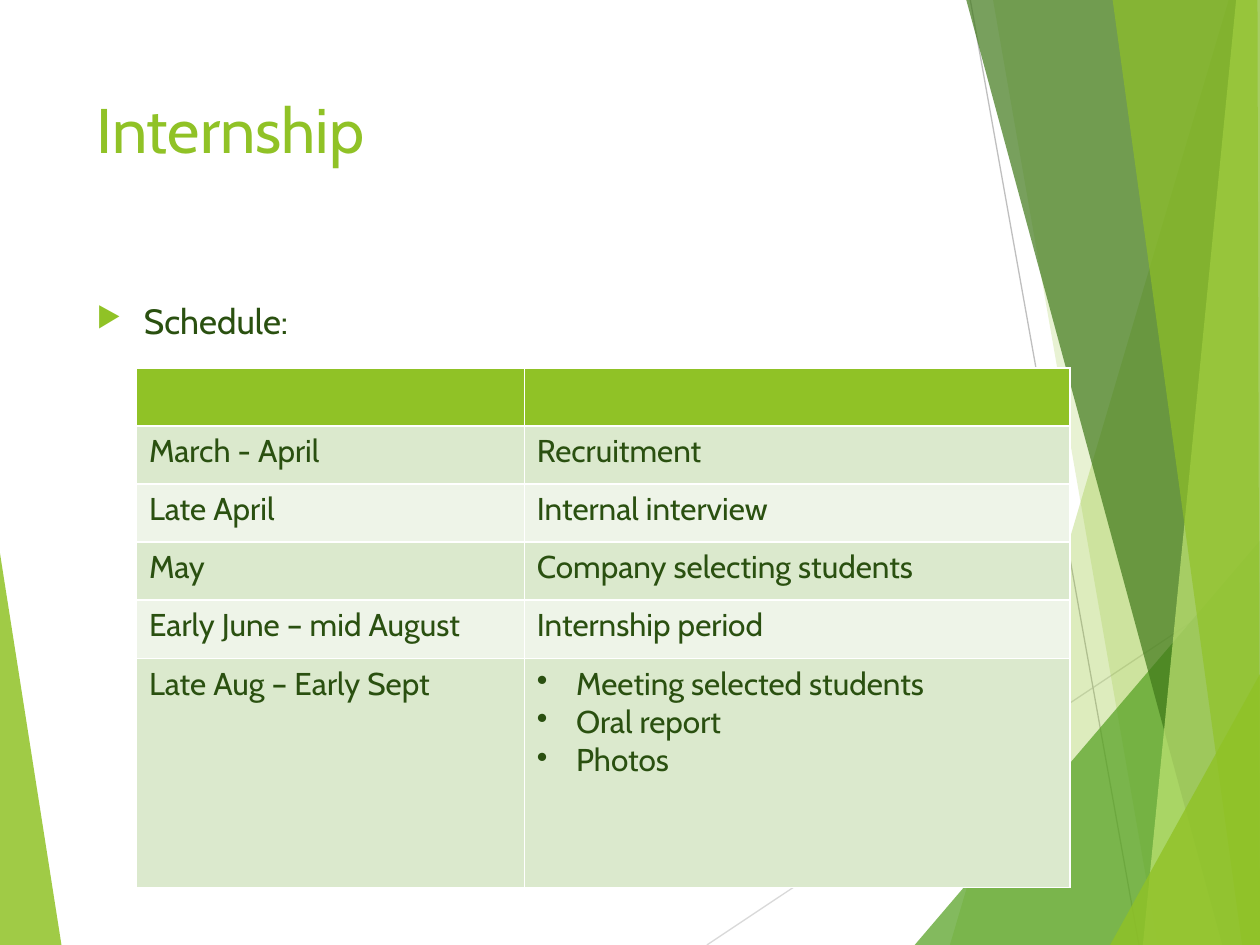
from lxml.etree import SubElement
from pptx import Presentation
from pptx.dml.color import RGBColor
from pptx.enum.shapes import MSO_CONNECTOR
from pptx.oxml.ns import qn
from pptx.util import Cm, Pt

THEME = {
    "font": "Cabin", "title_size": 36, "body_size": 20, "table_size": 18,
    "accent": "90C226", "text": "2A5010", "border": "FFFFFF",
    "bands": ("DBE9CD", "EEF4E8"),
    "leaf": "54A021", "forest": "3F7819", "lime": "C0E474",
    "light_line": "D9D9D9", "dark_line": "BFBFBF",
}
WIDTH, HEIGHT = 25.4, 19.05

TITLE = "Internship"
HEADING = "Schedule:"
SCHEDULE = [
    ("March - April", ["Recruitment"]),
    ("Late April", ["Internal interview"]),
    ("May", ["Company selecting students"]),
    ("Early June – mid August", ["Internship period"]),
    ("Late Aug – Early Sept", ["Meeting selected students", "Oral report", "Photos"]),
]
TABLE_LEFT, TABLE_TOP = 2.75, 7.42
COLUMN_WIDTHS = (7.82, 11)
ROW_HEIGHT, LAST_ROW_HEIGHT = 1.17, 4.62

TOP_RIGHT, BOTTOM_RIGHT = (WIDTH, 0), (WIDTH, HEIGHT)
LEFT_FACET = ([(0, 11.15), (1.24, HEIGHT), (0, HEIGHT)], "accent", 85)
RAYS = [
    ((14.25, HEIGHT), (WIDTH, 11.62), "light_line"),
    ((19.56, 0), (22.96, HEIGHT), "dark_line"),
]
RIGHT_FACETS = [
    ([(24.77, 0), (19.15, HEIGHT), BOTTOM_RIGHT, TOP_RIGHT], "accent", 30),
    ([(20.02, 0), (23.34, HEIGHT), BOTTOM_RIGHT, TOP_RIGHT], "accent", 20),
    ([(18.44, HEIGHT), (WIDTH, 10.9), BOTTOM_RIGHT], "leaf", 72),
    ([(19.48, 0), (24.64, HEIGHT), BOTTOM_RIGHT, TOP_RIGHT], "forest", 70),
    ([(24.92, 0), (23.04, HEIGHT), BOTTOM_RIGHT, TOP_RIGHT], "lime", 70),
    ([(22.43, 0), (25.04, HEIGHT), BOTTOM_RIGHT, (25.35, 0)], "accent", 65),
    ([(22.38, HEIGHT), (WIDTH, 13.59), BOTTOM_RIGHT], "accent", 80),
]


def rgb(role):
    return RGBColor.from_string(THEME.get(role, role))


def add_facet(slide, corners, role, opacity):
    points = [(Cm(x), Cm(y)) for x, y in corners]
    builder = slide.shapes.build_freeform(*points[0])
    builder.add_line_segments(points[1:], close=True)
    facet = builder.convert_to_shape()
    facet.shadow.inherit = False
    facet.line.fill.background()
    facet.fill.solid()
    facet.fill.fore_color.rgb = rgb(role)
    color = facet.fill._xPr.find(qn("a:solidFill"))[0]
    SubElement(color, qn("a:alpha"), val=str(opacity * 1000))


def add_ray(slide, start, end, role):
    ray = slide.shapes.add_connector(
        MSO_CONNECTOR.STRAIGHT, *(Cm(v) for v in start + end))
    ray.line.color.rgb = rgb(role)
    ray.line.width = Pt(0.75)
    SubElement(ray._element.spPr, qn("a:effectLst"))


def write_text(frame, lines, *, size, color="text", bullet=None, indent=0,
               bullet_color=None, bullet_scale=None):
    frame.word_wrap = True
    for index, line in enumerate(lines):
        paragraph = frame.paragraphs[0] if index == 0 else frame.add_paragraph()
        if bullet:
            properties = paragraph._p.get_or_add_pPr()
            properties.set("marL", str(Cm(indent)))
            properties.set("indent", str(-Cm(indent)))
            if bullet_color:
                holder = SubElement(properties, qn("a:buClr"))
                SubElement(holder, qn("a:srgbClr"), val=THEME[bullet_color])
            if bullet_scale:
                SubElement(properties, qn("a:buSzPct"), val=str(bullet_scale * 1000))
            SubElement(properties, qn("a:buChar"), char=bullet)
        run = paragraph.add_run()
        run.text = line
        run.font.name = THEME["font"]
        run.font.size = Pt(THEME[size])
        run.font.color.rgb = rgb(color)


def style_cell(cell, fill):
    properties = cell._tc.get_or_add_tcPr()
    for side in ("lnL", "lnR", "lnT", "lnB"):
        border = SubElement(properties, qn(f"a:{side}"), w=str(Pt(1)))
        holder = SubElement(border, qn("a:solidFill"))
        SubElement(holder, qn("a:srgbClr"), val=THEME["border"])
    cell.fill.solid()
    cell.fill.fore_color.rgb = rgb(fill)


def add_schedule(slide):
    heights = [ROW_HEIGHT] * len(SCHEDULE) + [LAST_ROW_HEIGHT]
    table = slide.shapes.add_table(
        len(heights), len(COLUMN_WIDTHS), Cm(TABLE_LEFT), Cm(TABLE_TOP),
        Cm(sum(COLUMN_WIDTHS)), Cm(sum(heights))).table
    for column, width in zip(table.columns, COLUMN_WIDTHS):
        column.width = Cm(width)
    for number, (row, height) in enumerate(zip(table.rows, heights)):
        row.height = Cm(height)
        for cell in row.cells:
            style_cell(cell, THEME["bands"][(number - 1) % 2] if number else "accent")
    for number, (period, activities) in enumerate(SCHEDULE, start=1):
        write_text(table.cell(number, 0).text_frame, [period], size="table_size")
        write_text(table.cell(number, 1).text_frame, activities, size="table_size",
                   bullet="•" if len(activities) > 1 else None, indent=0.79)


def main():
    deck = Presentation()
    deck.slide_width, deck.slide_height = Cm(WIDTH), Cm(HEIGHT)
    slide = deck.slides.add_slide(deck.slide_layouts[6])
    add_facet(slide, *LEFT_FACET)
    for ray in RAYS:
        add_ray(slide, *ray)
    for facet in RIGHT_FACETS:
        add_facet(slide, *facet)
    title = slide.shapes.add_textbox(Cm(1.7), Cm(1.7), Cm(17.63), Cm(3.66))
    write_text(title.text_frame, [TITLE], size="title_size", color="accent")
    heading = slide.shapes.add_textbox(Cm(1.7), Cm(5.92), Cm(17.63), Cm(10.77))
    write_text(heading.text_frame, [HEADING], size="body_size", bullet="▶",
               indent=0.95, bullet_color="accent", bullet_scale=80)
    add_schedule(slide)
    deck.save("out.pptx")


if __name__ == "__main__":
    main()
